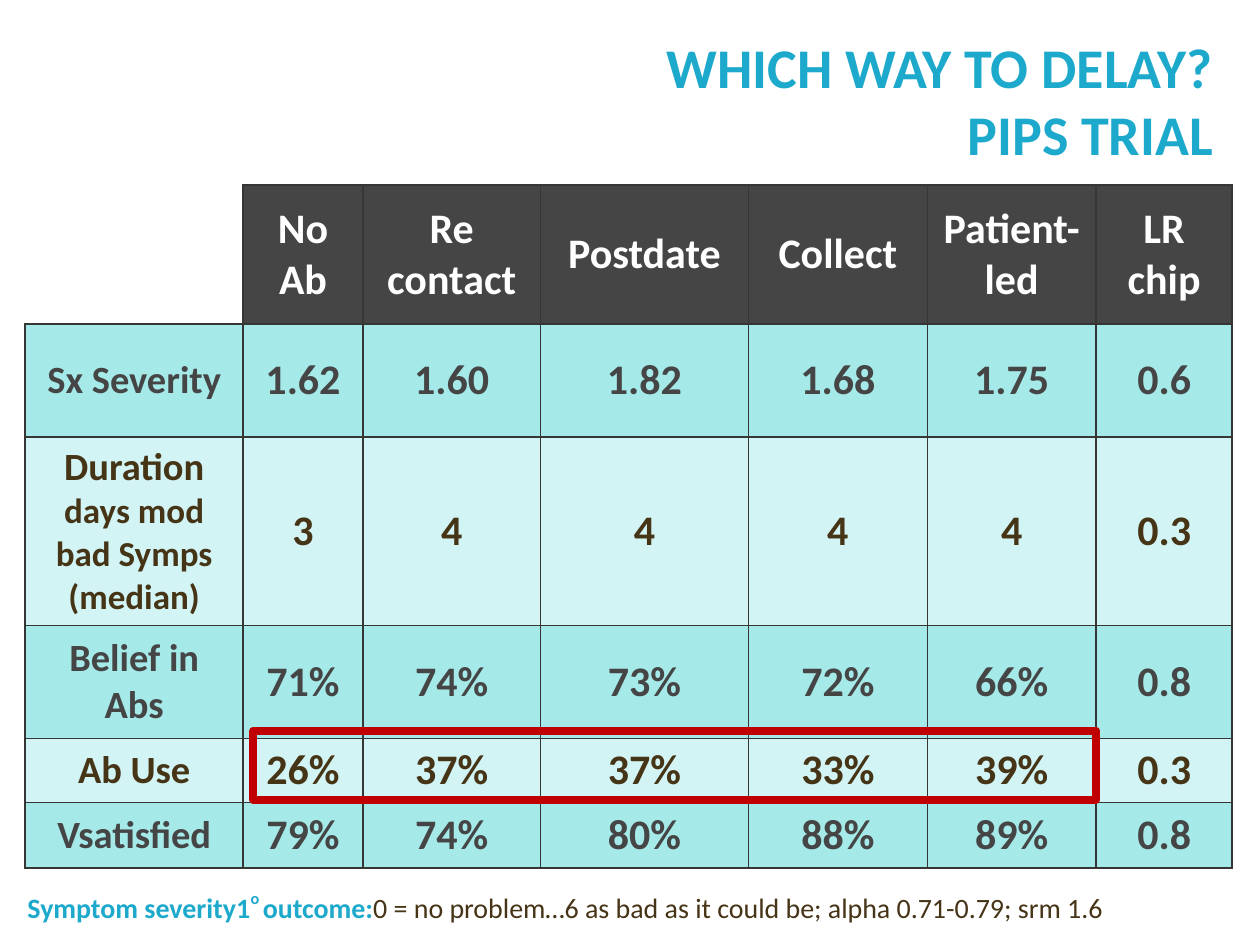
from dataclasses import dataclass

from pptx import Presentation
from pptx.dml.color import RGBColor as Rgb
from pptx.enum.shapes import MSO_SHAPE as Shape
from pptx.enum.text import MSO_ANCHOR as Anchor, MSO_AUTO_SIZE as Fit, PP_ALIGN as Align
from pptx.oxml import parse_xml
from pptx.oxml.ns import nsdecls
from pptx.util import Inches, Pt


@dataclass(frozen=True)
class Theme:
    font: str = "Calibri"
    accent: str = "1DA9CB"
    brown: str = "463416"
    dark: str = "454545"
    white: str = "FFFFFF"
    teal: str = "A5E9E9"
    pale: str = "D2F4F4"
    grid: str = "363636"
    alert: str = "C00000"
    title: int = 32
    body: int = 24
    label: int = 22
    small: int = 20
    note: int = 16


class Deck:
    """Holds the style and the slide; lengths are percent of the slide."""

    def __init__(self, theme):
        self.theme = theme
        self.prs = Presentation()
        self.prs.slide_width, self.prs.slide_height = Inches(10), Inches(7.5)
        self.slide = self.prs.slides.add_slide(self.prs.slide_layouts[5])

    def wide(self, share):
        return round(self.prs.slide_width * share / 100)

    def high(self, share):
        return round(self.prs.slide_height * share / 100)

    def box(self, x, y, w, h):
        return self.wide(x), self.high(y), self.wide(w), self.high(h)

    def style(self, font, size, color, bold=True):
        font.name, font.size, font.bold = self.theme.font, Pt(size), bold
        font.color.rgb = Rgb.from_string(color)

    def title(self, text, *area):
        item = self.slide.shapes.title
        item.left, item.top, item.width, item.height = self.box(*area)
        frame = item.text_frame
        frame.text = text
        frame.word_wrap, frame.auto_size = True, Fit.NONE
        frame.vertical_anchor = Anchor.TOP
        for para in frame.paragraphs:
            para.alignment = Align.RIGHT
            self.style(para.font, self.theme.title, self.theme.accent)

    def edge(self, cell, sides):
        props = cell._tc.get_or_add_tcPr()
        for side in "LRTB":
            paint = (f'<a:solidFill><a:srgbClr val="{self.theme.grid}"/></a:solidFill>'
                     if side in sides else "<a:noFill/>")
            props.append(parse_xml(
                f'<a:ln{side} {nsdecls("a")} w="{Pt(1)}">{paint}</a:ln{side}>'))

    def cell(self, cell, parts, fill, color):
        """Fill a cell; parts is a list of (text, size) runs."""
        self.edge(cell, "LRTB")
        cell.fill.solid()
        cell.fill.fore_color.rgb = Rgb.from_string(fill)
        cell.vertical_anchor = Anchor.MIDDLE
        first, *rest = parts
        cell.text = first[0]
        for para in cell.text_frame.paragraphs:
            para.alignment = Align.CENTER
            self.style(para.font, first[1], color)
        for text, size in rest:
            run = para.add_run()
            run.text = text
            run.font.size = Pt(size)

    def table(self, heads, rows, cols, highs, *area):
        t = self.theme
        frame = self.slide.shapes.add_table(len(highs), len(cols), *self.box(*area))
        grid = frame.table
        for col, share in zip(grid.columns, cols):
            col.width = self.wide(share)
        for row, share in zip(grid.rows, highs):
            row.height = self.high(share)
        frame.height = self.high(area[3])

        # Open corner, then the header row
        corner = grid.cell(0, 0)
        self.edge(corner, "RB")
        corner.fill.background()
        for c, head in enumerate(heads, 1):
            self.cell(grid.cell(0, c), [(head, t.body)], t.dark, t.white)

        # Striped body rows
        for r, (label, *values) in enumerate(rows, 1):
            look = (t.teal, t.dark) if r % 2 else (t.pale, t.brown)
            self.cell(grid.cell(r, 0), label, *look)
            for c, value in enumerate(values, 1):
                self.cell(grid.cell(r, c), [(value, t.body)], *look)

    def note(self, parts, *area):
        """Add one line; parts are (text, color, bold, raised share) runs."""
        frame = self.slide.shapes.add_textbox(*self.box(*area)).text_frame
        frame.word_wrap, frame.auto_size = False, Fit.SHAPE_TO_FIT_TEXT
        for text, color, bold, lift in parts:
            run = frame.paragraphs[0].add_run()
            run.text = text
            self.style(run.font, self.theme.note, color, bold)
            if lift:
                run._r.get_or_add_rPr().set("baseline", str(lift * 1000))

    def ring(self, *area):
        item = self.slide.shapes.add_shape(Shape.RECTANGLE, *self.box(*area))
        item.shadow.inherit = False
        item.fill.background()
        item.line.color.rgb = Rgb.from_string(self.theme.alert)
        item.line.width = Pt(4.5)


def main():
    t = Theme()
    deck = Deck(t)
    deck.title("WHICH WAY TO DELAY?\nPIPS TRIAL", 39.8, 2.8, 57.5, 15.73)

    # Trial results
    heads = ["No\nAb", "Re contact", "Postdate", "Collect", "Patient-led", "LR chip"]
    rows = [
        ([("Sx Severity", t.label)], "1.62", "1.60", "1.82", "1.68", "1.75", "0.6"),
        ([("Duration ", t.label), ("days mod bad Symps (median)", t.small)],
         "3", "4", "4", "4", "4", "0.3"),
        ([("Belief in Abs", t.label)], "71%", "74%", "73%", "72%", "66%", "0.8"),
        ([("Ab Use", t.label)], "26%", "37%", "37%", "33%", "39%", "0.3"),
        ([("Vsatisfied", t.label)], "79%", "74%", "80%", "88%", "89%", "0.8"),
    ]
    cols = [17.3, 9.5, 14.1, 16.5, 14.2, 13.4, 10.8]
    highs = [14.67, 12, 14.67, 12, 5.33, 6.93]
    deck.table(heads, rows, cols, highs, 2, 19.6, 95.9, 71.87)

    # Outcome scale
    deck.note([
        ("Symptom severity1", t.accent, True, 0),
        ("o ", t.accent, True, 50),
        ("outcome:", t.accent, True, 0),
        ("0 = no problem…6 as bad as it could be; alpha 0.71-0.79; srm 1.6",
         t.brown, False, 0),
    ], 1.2, 93.33, 88.7, 4.93)

    # Highlight on antibiotic use
    deck.ring(20.1, 77.33, 66.9, 7.33)
    deck.prs.save("out.pptx")


if __name__ == "__main__":
    main()
